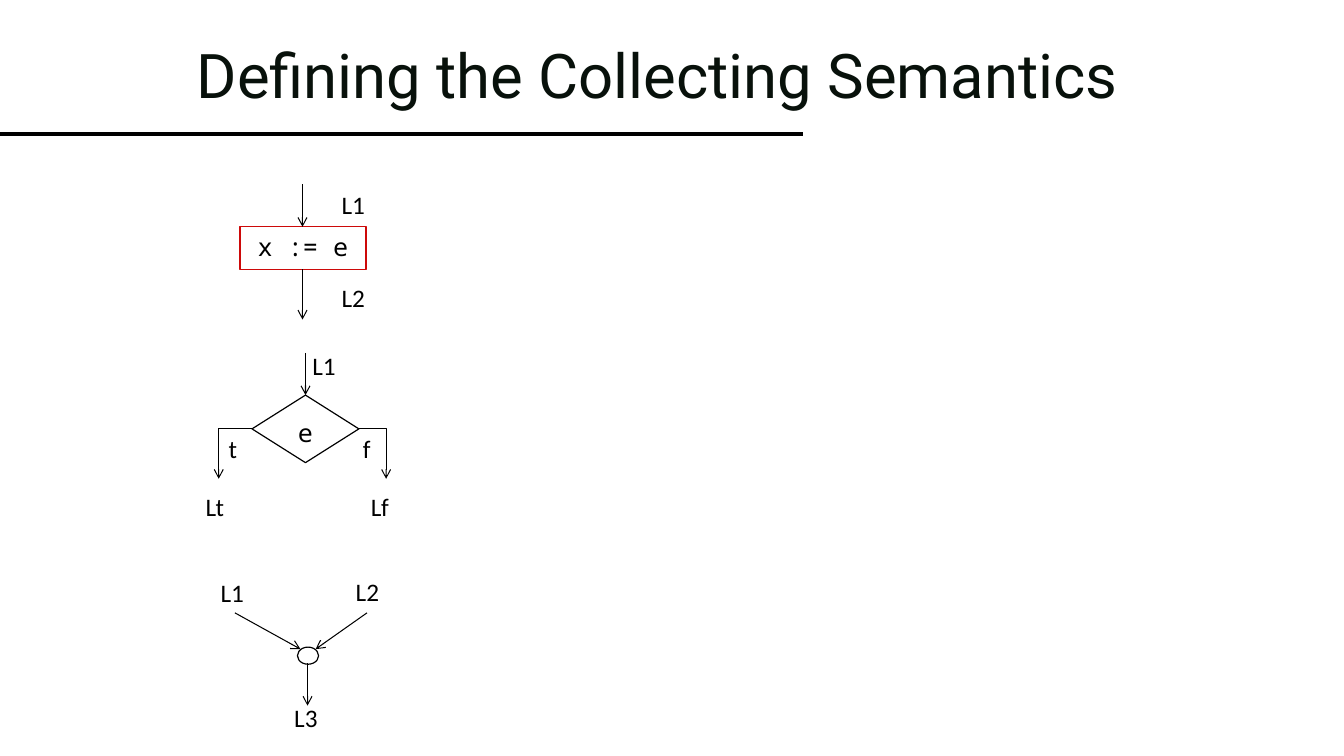
from dataclasses import dataclass

from lxml.etree import SubElement
from pptx import Presentation
from pptx.dml.color import RGBColor
from pptx.enum.shapes import MSO_CONNECTOR, MSO_SHAPE
from pptx.enum.text import MSO_ANCHOR, MSO_AUTO_SIZE, PP_ALIGN
from pptx.oxml.ns import qn
from pptx.util import Inches, Pt


@dataclass(frozen=True)
class Theme:
    ink: RGBColor = RGBColor(0, 0, 0)
    paper: RGBColor = RGBColor(255, 255, 255)
    red: RGBColor = RGBColor(0xCD, 0x09, 0x09)
    head: RGBColor = RGBColor(0x08, 0x11, 0x0B)
    head_font: str = "Roboto"
    code_font: str = "Noto Sans Mono"
    body_font: str = "Calibri"
    head_size: int = 44
    body_size: int = 18
    rule: float = 2.25
    edge: float = 0.85
    flow: float = 0.75


THEME = Theme()


def style(frame, font, size, color, align):
    para = frame.paragraphs[0]
    para.alignment = align
    for run in para.runs:
        run.font.name = font
        run.font.size = Pt(size)
        run.font.color.rgb = color


def add_title(slide, text):
    title = slide.shapes.title
    title.left, title.top = Inches(1.85), Inches(0.18)
    title.width, title.height = Inches(9.81), Inches(1.2)
    frame = title.text_frame
    frame.text = text
    frame.auto_size = MSO_AUTO_SIZE.NONE
    frame.vertical_anchor = MSO_ANCHOR.MIDDLE
    frame.paragraphs[0].line_spacing = 0.9
    style(frame, THEME.head_font, THEME.head_size, THEME.head, PP_ALIGN.LEFT)


def add_line(shapes, start, end, width, kind=MSO_CONNECTOR.STRAIGHT):
    line = shapes.add_connector(kind, *map(Inches, start + end))
    line.line.color.rgb = THEME.ink
    line.line.width = Pt(width)
    SubElement(line._element.spPr, qn("a:effectLst"))
    return line


def add_arrow(shapes, start, end, kind=MSO_CONNECTOR.STRAIGHT):
    arrow = add_line(shapes, start, end, THEME.flow, kind)
    SubElement(arrow.line._get_or_add_ln(), qn("a:tailEnd"), type="arrow")
    return arrow


def add_bend(shapes, start, end):
    """Draw an arrow that runs across, then turns down once."""
    bend = add_arrow(shapes, start, end, MSO_CONNECTOR.ELBOW)
    bend._element.spPr.find(qn("a:prstGeom")).set("prst", "bentConnector2")


def add_node(shapes, kind, box, text="", edge=THEME.ink):
    node = shapes.add_shape(kind, *map(Inches, box))
    node.shadow.inherit = False
    node.fill.solid()
    node.fill.fore_color.rgb = THEME.paper
    node.line.color.rgb = edge
    node.line.width = Pt(THEME.edge)
    if text:
        frame = node.text_frame
        frame.text = text
        frame.vertical_anchor = MSO_ANCHOR.TOP
        style(frame, THEME.code_font, THEME.body_size, THEME.ink, PP_ALIGN.CENTER)


def add_label(shapes, text, left, top, width=0.44):
    box = shapes.add_textbox(Inches(left), Inches(top), Inches(width), Inches(0.4))
    frame = box.text_frame
    frame.text = text
    frame.word_wrap = False
    frame.auto_size = MSO_AUTO_SIZE.SHAPE_TO_FIT_TEXT
    style(frame, THEME.body_font, THEME.body_size, THEME.ink, PP_ALIGN.LEFT)


def add_assign(shapes):
    add_node(shapes, MSO_SHAPE.RECTANGLE, (2.38, 2.25, 1.25, 0.42), "x := e", THEME.red)
    add_arrow(shapes, (3, 1.83), (3, 2.25))
    add_arrow(shapes, (3, 2.67), (3, 3.17))
    add_label(shapes, "L1", 3.29, 1.83)
    add_label(shapes, "L2", 3.29, 2.75)


def add_branch(shapes):
    add_node(shapes, MSO_SHAPE.DIAMOND, (2.5, 3.92, 1.06, 0.67), "e")
    add_arrow(shapes, (3.03, 3.5), (3.03, 3.92))
    add_bend(shapes, (2.5, 4.25), (2.17, 4.75))
    add_bend(shapes, (3.56, 4.25), (3.83, 4.75))
    add_label(shapes, "L1", 3, 3.43)
    add_label(shapes, "t", 2.17, 4.25, 0.29)
    add_label(shapes, "f", 3.5, 4.25, 0.28)
    add_label(shapes, "Lt", 1.94, 4.83, 0.39)
    add_label(shapes, "Lf", 3.58, 4.83, 0.38)


def add_join(shapes):
    add_node(shapes, MSO_SHAPE.OVAL, (2.95, 6.42, 0.21, 0.17))
    add_arrow(shapes, (2.33, 6.08), (2.98, 6.44))
    add_arrow(shapes, (3.64, 6.08), (3.13, 6.44))
    add_arrow(shapes, (3.05, 6.58), (3.05, 7))
    add_label(shapes, "L1", 2.09, 5.68)
    add_label(shapes, "L2", 3.43, 5.67)
    add_label(shapes, "L3", 2.82, 6.92)


def main():
    deck = Presentation()
    deck.slide_width, deck.slide_height = Inches(13.33), Inches(7.5)
    slide = deck.slides.add_slide(deck.slide_layouts.get_by_name("Title Only"))
    add_line(slide.shapes, (0, 1.33), (7.96, 1.33), THEME.rule)
    add_title(slide, "Defining the Collecting Semantics")
    for draw in (add_assign, add_branch, add_join):
        draw(slide.shapes.add_group_shape().shapes)
    deck.save("out.pptx")


if __name__ == "__main__":
    main()
